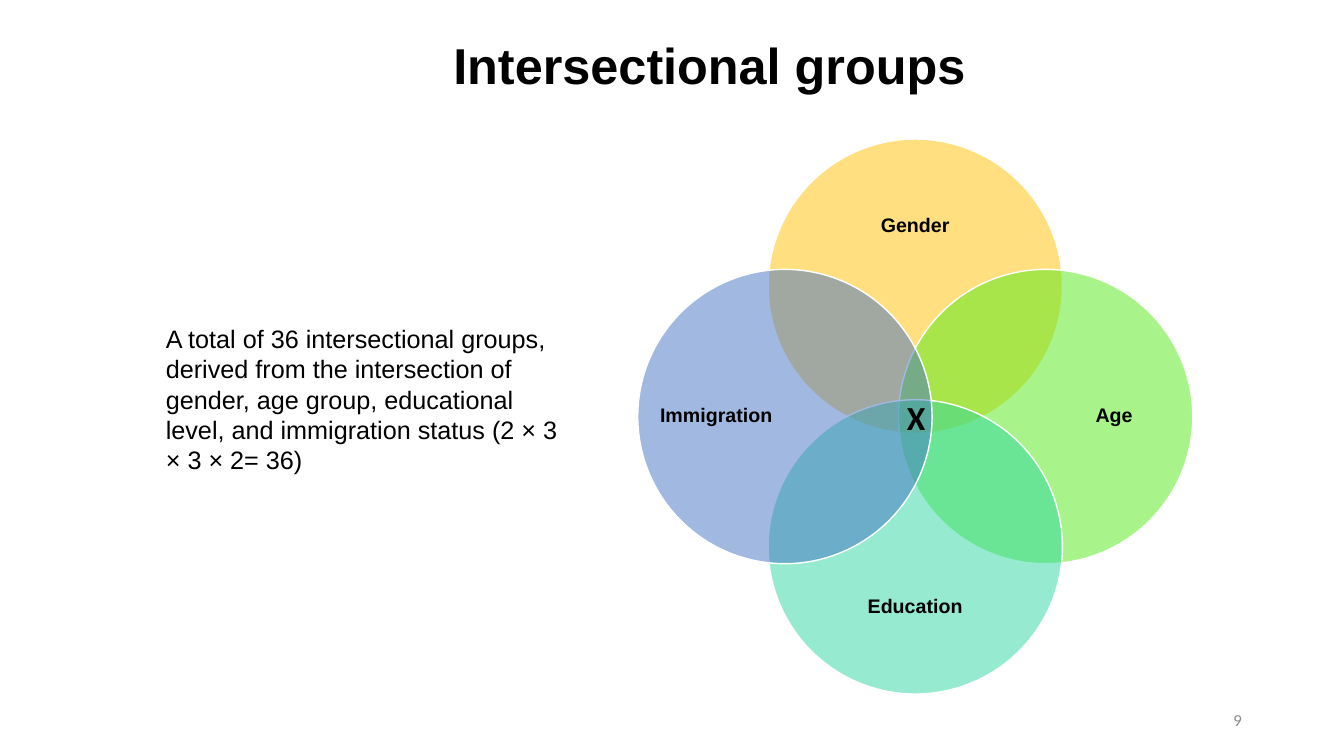
"""Build the slide on intersectional groups with a four-circle Venn diagram."""
from lxml.etree import SubElement
from pptx import Presentation
from pptx.dml.color import RGBColor
from pptx.enum.shapes import MSO_SHAPE
from pptx.enum.text import MSO_ANCHOR, PP_ALIGN
from pptx.oxml.ns import qn
from pptx.util import Inches, Pt

BLACK = RGBColor(0x00, 0x00, 0x00)
WHITE = RGBColor(0xFF, 0xFF, 0xFF)
GRAY = RGBColor(0x8C, 0x8C, 0x8C)
AMBER = RGBColor(0xFF, 0xC0, 0x00)
LIME = RGBColor(0x53, 0xEB, 0x17)
MINT = RGBColor(0x2E, 0xD7, 0xA1)
BLUE = RGBColor(0x44, 0x72, 0xC4)

deck = Presentation()
deck.slide_width, deck.slide_height = Inches(13.33), Inches(7.5)
slide = deck.slides.add_slide(deck.slide_layouts[6])
CELL = deck.slide_width / 100


def grid(*cells):
    return [round(cell * CELL) for cell in cells]


def add_text(text, box, size, font="Arial", color=BLACK, bold=False, align=PP_ALIGN.LEFT,
             anchor=MSO_ANCHOR.MIDDLE, spacing=1.0, wrap=True, inset=True):
    frame = slide.shapes.add_textbox(*grid(*box)).text_frame
    frame.word_wrap = wrap
    frame.vertical_anchor = anchor
    if not inset:
        frame.margin_left = frame.margin_top = frame.margin_right = frame.margin_bottom = 0
    paragraph = frame.paragraphs[0]
    paragraph.alignment = align
    paragraph.line_spacing = spacing
    run = paragraph.add_run()
    run.text = text
    run.font.name, run.font.size, run.font.bold = font, Pt(size), bold
    run.font.color.rgb = color


add_text("Intersectional groups", (6.2, -0.4, 93.2, 10.9), 36, bold=True,
         align=PP_ALIGN.CENTER, spacing=0.9)
add_text("9", (70.65, 52.1, 22.5, 3), 12, font="Calibri", color=GRAY, align=PP_ALIGN.RIGHT)
add_text("A total of 36 intersectional groups, derived from the intersection of gender, "
         "age group, educational level, and immigration status (2 × 3 × 3 × 2= 36)",
         (11.6, 23.7, 30.7, 12.2), 18, anchor=MSO_ANCHOR.TOP)

center_x, center_y = 68.1, 31
diameter, circle_reach = 21.9, 9.7
dimensions = [
    ("Gender", AMBER, 0, -1, 14.2, 16.9, 7),
    ("Age", LIME, 1, 0, 14.8, 8.4, 16.9),
    ("Education", MINT, 0, 1, 14.2, 16.9, 7),
    ("Immigration", BLUE, -1, 0, 14.8, 8.4, 16.9),
]
for dimension, color, step_x, step_y, label_reach, label_width, label_height in dimensions:
    circle = slide.shapes.add_shape(MSO_SHAPE.OVAL, *grid(
        center_x + step_x * circle_reach - diameter / 2,
        center_y + step_y * circle_reach - diameter / 2, diameter, diameter))
    circle.shadow.inherit = False
    circle.fill.solid()
    circle.fill.fore_color.rgb = color
    tint = circle.fill._xPr.find(qn("a:solidFill"))[0]
    SubElement(tint, qn("a:alpha")).set("val", "50000")
    circle.line.color.rgb = WHITE
    circle.line.width = Pt(1)
    add_text(dimension, (center_x + step_x * label_reach - label_width / 2,
                         center_y + step_y * label_reach - label_height / 2,
                         label_width, label_height),
             14, bold=True, align=PP_ALIGN.CENTER, spacing=0.9, inset=False)

add_text("X", (center_x - 1.35, 29.2, 2.7, 3.75), 24, font="Calibri", bold=True,
         align=PP_ALIGN.CENTER, anchor=MSO_ANCHOR.TOP, wrap=False)

deck.save("out.pptx")
